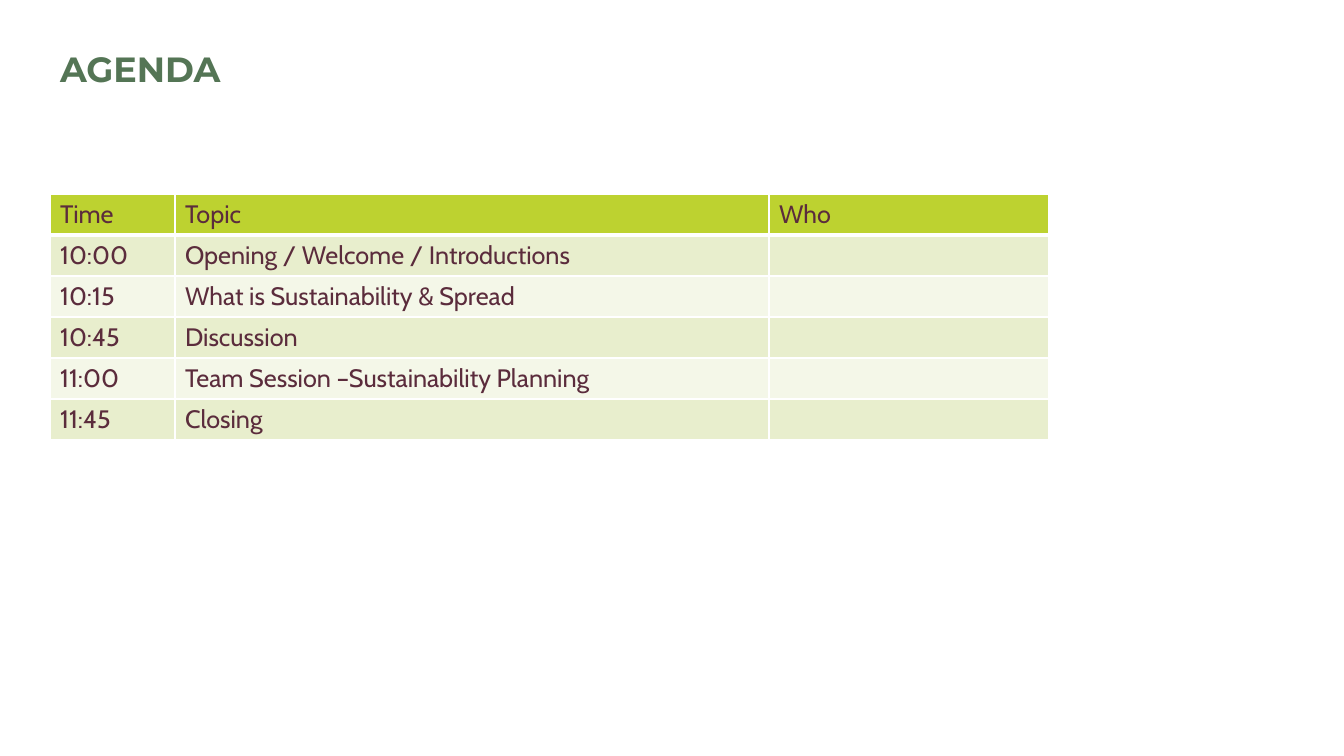
from lxml import etree
from pptx import Presentation
from pptx import util as u
from pptx.dml.color import RGBColor
from pptx.enum import text
from pptx.oxml import ns

GREEN = RGBColor(0x54, 0x75, 0x55)
PLUM = RGBColor(0x5B, 0x2C, 0x3C)
LIME = RGBColor(0xBD, 0xD2, 0x30)
BAND_DARK = RGBColor(0xE8, 0xEE, 0xCD)
BAND_LIGHT = RGBColor(0xF4, 0xF7, 0xE8)
WHITE = RGBColor(0xFF, 0xFF, 0xFF)
PX = 914400 / 100.8


def px(length):
    return u.Emu(round(length * PX))


def write(frame, content, font, size, color, bold=False):
    paragraph = frame.paragraphs[0]
    paragraph.alignment = text.PP_ALIGN.LEFT
    paragraph.space_before = u.Pt(0)
    run = paragraph.add_run()
    run.text = content
    run.font.name = font
    run.font.size = u.Pt(size)
    run.font.color.rgb = color
    run.font.bold = bold


presentation = Presentation()
presentation.slide_width = px(1344)
presentation.slide_height = px(756)
slide = presentation.slides.add_slide(presentation.slide_layouts[5])

title = slide.shapes.title
title.left, title.top, title.width, title.height = px(50), px(42), px(1000), px(50)
title.text_frame.auto_size = text.MSO_AUTO_SIZE.NONE
title.text_frame.vertical_anchor = text.MSO_ANCHOR.TOP
write(title.text_frame, "AGENDA", font="Montserrat", size=25, color=GREEN, bold=True)

agenda = [
    ("Time", "Topic", "Who"),
    ("10:00", "Opening / Welcome / Introductions", ""),
    ("10:15", "What is Sustainability & Spread", ""),
    ("10:45", "Discussion", ""),
    ("11:00", "Team Session –Sustainability Planning", ""),
    ("11:45", "Closing", ""),
]
column_widths = [125, 594, 280]
row_height = 41

table = slide.shapes.add_table(
    len(agenda), len(column_widths), px(50), px(194),
    px(sum(column_widths)), px(row_height * len(agenda)),
).table
for column, width in zip(table.columns, column_widths):
    column.width = px(width)

for row_index, entries in enumerate(agenda):
    table.rows[row_index].height = px(row_height)
    if row_index == 0:
        fill_color = LIME
    else:
        fill_color = BAND_DARK if row_index % 2 else BAND_LIGHT
    for column_index, entry in enumerate(entries):
        cell = table.cell(row_index, column_index)
        cell.vertical_anchor = text.MSO_ANCHOR.MIDDLE
        properties = cell._tc.get_or_add_tcPr()
        for side in ("lnL", "lnR", "lnT", "lnB"):
            under_header = (row_index, side) in ((0, "lnB"), (1, "lnT"))
            border = etree.SubElement(properties, ns.qn(f"a:{side}"))
            border.set("w", str(u.Pt(3 if under_header else 1)))
            line_fill = etree.SubElement(border, ns.qn("a:solidFill"))
            etree.SubElement(line_fill, ns.qn("a:srgbClr")).set("val", str(WHITE))
        cell.fill.solid()
        cell.fill.fore_color.rgb = fill_color
        if entry:
            write(cell.text_frame, entry, font="Cabin", size=18, color=PLUM)

presentation.save("out.pptx")
